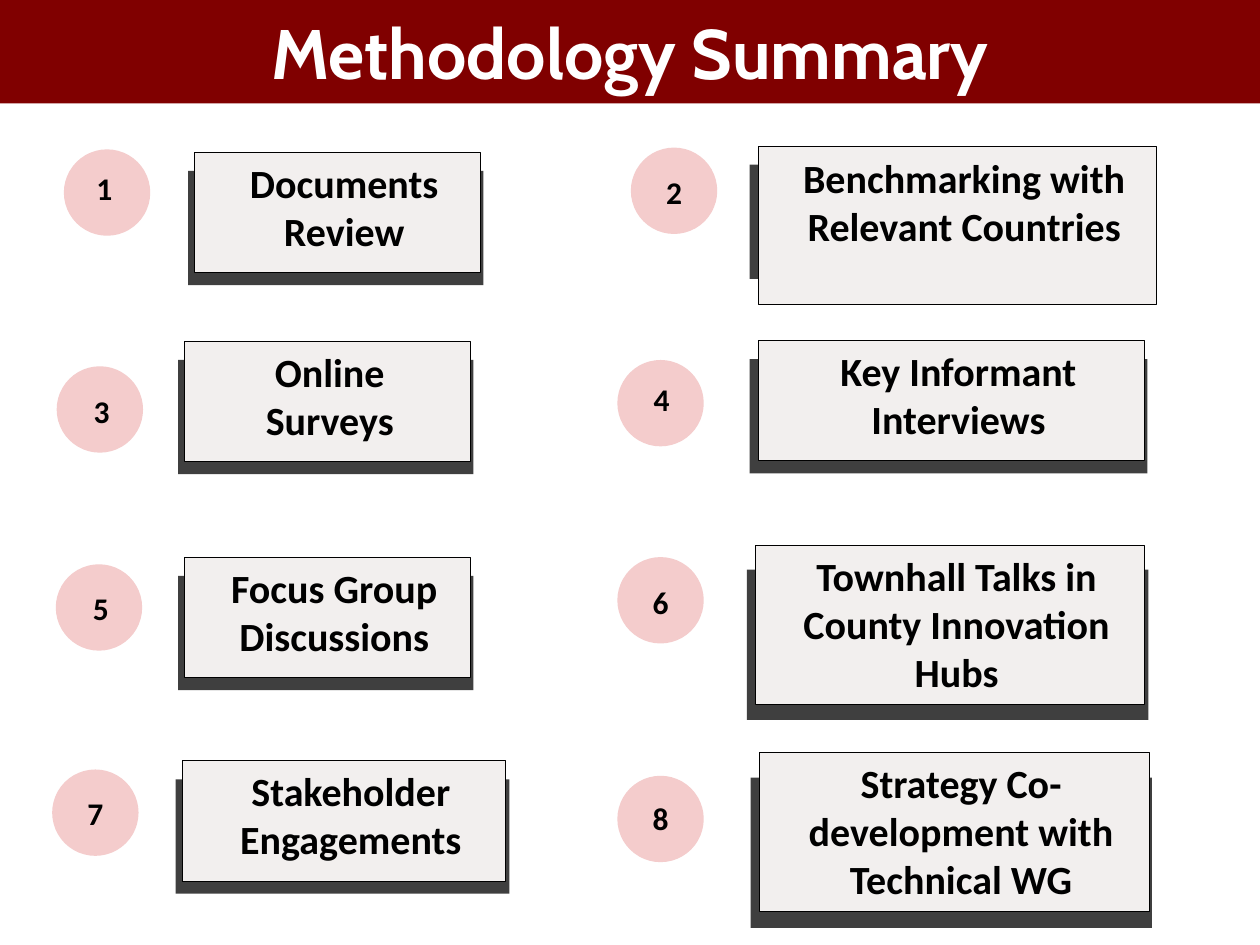
from dataclasses import dataclass

from pptx import Presentation
from pptx.dml.color import RGBColor
from pptx.enum.shapes import MSO_SHAPE
from pptx.enum.text import MSO_ANCHOR, PP_ALIGN
from pptx.util import Inches, Pt

MAROON, PINK, PAPER, SHADOW = "800000", "F4CCCC", "F2EFEE", "3F3F3F"
BLACK, WHITE = "000000", "FFFFFF"
BADGE_SIZE = 0.96
NUMBER_SIZE = (0.82, 0.53)


@dataclass
class Step:
    """One method: corners of badge and number, boxes of card and its shadow."""
    text: str
    badge: tuple
    number: tuple
    card: tuple
    shadow: tuple


STEPS = [
    Step("Documents Review", (0.71, 1.66), (0.75, 1.83),
         (2.16, 1.69, 3.18, 1.34), (2.09, 1.9, 3.28, 1.27)),
    Step("Benchmarking with Relevant Countries", (7.01, 1.64), (7.08, 1.87),
         (8.43, 1.63, 4.42, 1.75), (8.33, 1.83, 4.42, 1.27)),
    Step("Online \nSurveys ", (0.63, 4.07), (0.72, 4.31),
         (2.05, 3.79, 3.18, 1.34), (1.98, 4, 3.28, 1.27)),
    Step("Key Informant Interviews", (6.86, 4), (6.94, 4.17),
         (8.43, 3.78, 4.29, 1.34), (8.33, 3.99, 4.42, 1.27)),
    Step("Focus Group Discussions", (0.62, 6.27), (0.71, 6.5),
         (2.05, 6.19, 3.18, 1.34), (1.98, 6.4, 3.28, 1.27)),
    Step("Townhall Talks in County Innovation Hubs", (6.86, 6.19), (6.93, 6.43),
         (8.39, 6.06, 4.33, 1.77), (8.3, 6.33, 4.46, 1.67)),
    Step("Stakeholder Engagements", (0.58, 8.55), (0.65, 8.77),
         (2.03, 8.45, 3.59, 1.34), (1.95, 8.66, 3.71, 1.27)),
    Step("Strategy Co-development with Technical WG", (6.86, 8.62), (6.93, 8.83),
         (8.44, 8.36, 4.33, 1.77), (8.34, 8.64, 4.46, 1.67)),
]


def color(hex_string):
    return RGBColor.from_string(hex_string)


def add_block(slide, kind, box, fill, line=None):
    block = slide.shapes.add_shape(kind, *map(Inches, box))
    block.shadow.inherit = False
    block.fill.solid()
    block.fill.fore_color.rgb = color(fill)
    if line:
        block.line.color.rgb = color(line)
        block.line.width = Pt(0.75)
    else:
        block.line.fill.background()
    return block


def write(shape, text, *, size, font="Calibri", ink=BLACK, anchor=MSO_ANCHOR.TOP,
          inset=(0.1, 0.05), indent=0):
    frame = shape.text_frame
    frame.word_wrap = True
    frame.vertical_anchor = anchor
    frame.margin_left = frame.margin_right = Inches(inset[0])
    frame.margin_top = frame.margin_bottom = Inches(inset[1])
    frame.text = text
    for paragraph in frame.paragraphs:
        paragraph.alignment = PP_ALIGN.CENTER
        if indent:
            paragraph._p.get_or_add_pPr().set("marL", str(Inches(indent)))
        style = paragraph.runs[0].font
        style.name, style.size, style.bold = font, Pt(size), True
        style.color.rgb = color(ink)


def add_title(slide, box, text):
    banner = add_block(slide, MSO_SHAPE.RECTANGLE, box, MAROON)
    write(banner, text, size=56, font="Cabin", ink=WHITE, anchor=MSO_ANCHOR.MIDDLE)


def add_card(slide, box, shadow_box, text):
    add_block(slide, MSO_SHAPE.RECTANGLE, shadow_box, SHADOW)
    card = add_block(slide, MSO_SHAPE.RECTANGLE, box, PAPER, line=BLACK)
    write(card, text, size=32, inset=(0.14, 0.07), indent=0.15)


def add_badge(slide, corner, number_corner, number):
    add_block(slide, MSO_SHAPE.OVAL, (*corner, BADGE_SIZE, BADGE_SIZE), PINK)
    label = slide.shapes.add_textbox(*map(Inches, (*number_corner, *NUMBER_SIZE)))
    write(label, str(number), size=25.2)


def main():
    deck = Presentation()
    deck.slide_width, deck.slide_height = Inches(14), Inches(10.5)
    slide = deck.slides.add_slide(deck.slide_layouts[6])

    # Title banner
    add_title(slide, (0, 0, 14, 1.15), "Methodology Summary")

    # Numbered methods
    for number, step in enumerate(STEPS, start=1):
        add_card(slide, step.card, step.shadow, step.text)
        add_badge(slide, step.badge, step.number, number)

    deck.save("out.pptx")


if __name__ == "__main__":
    main()
